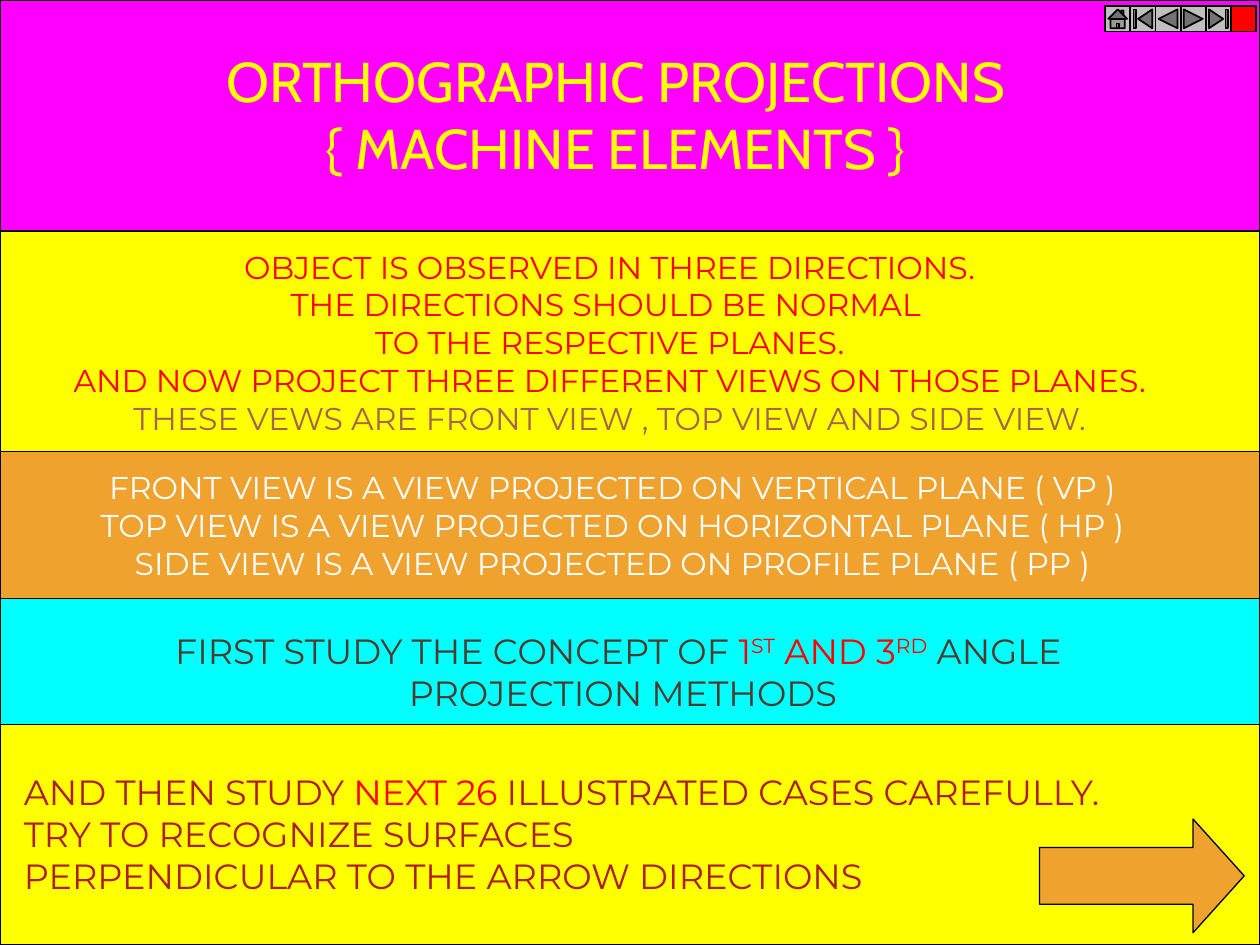
from pptx import Presentation
from pptx.dml.color import RGBColor
from pptx.enum import shapes, text
from pptx.util import Pt

MAGENTA = RGBColor(0xFF, 0x00, 0xFF)
YELLOW = RGBColor(0xFF, 0xFF, 0x00)
ORANGE = RGBColor(0xF0, 0xA2, 0x2E)
CYAN = RGBColor(0x00, 0xFF, 0xFF)
RED = RGBColor(0xFF, 0x00, 0x00)
BROWN = RGBColor(0xA5, 0x64, 0x4E)
DARK_BROWN = RGBColor(0x4E, 0x3B, 0x30)
DARK_RED = RGBColor(0xAD, 0x1F, 0x1F)
WHITE = RGBColor(0xFF, 0xFF, 0xFF)
GREY = RGBColor(0xC0, 0xC0, 0xC0)
BLACK = RGBColor(0x00, 0x00, 0x00)

WIDTH, HEIGHT = 720, 540
SHAPE = shapes.MSO_SHAPE
LEFT, CENTER = text.PP_ALIGN.LEFT, text.PP_ALIGN.CENTER


class Slide:
    title_font = "Cabin"
    body_font = "Montserrat"

    def __init__(self, deck):
        self.page = deck.slides.add_slide(deck.slide_layouts[5])

    def shape(self, kind, left, top, width, height, fill, line=0.75):
        shape = self.page.shapes.add_shape(kind, Pt(left), Pt(top), Pt(width), Pt(height))
        shape.shadow.inherit = False
        shape.fill.solid()
        shape.fill.fore_color.rgb = fill
        shape.line.color.rgb = BLACK
        shape.line.width = Pt(line)
        return shape

    def band(self, top, height, fill):
        return self.shape(SHAPE.RECTANGLE, 0, top, WIDTH, height, fill)

    def set_lines(self, box, lines, font, size, color, align):
        frame = box.text_frame
        frame.word_wrap = False
        frame.auto_size = text.MSO_AUTO_SIZE.NONE
        frame.vertical_anchor = text.MSO_ANCHOR.TOP
        for index, line in enumerate(lines):
            para = frame.add_paragraph() if index else frame.paragraphs[0]
            para.alignment = align
            para.font.name = font
            para.font.size = Pt(size)
            para.font.color.rgb = color
            for part in [(line,)] if isinstance(line, str) else line:
                self.span(para, *part)

    def span(self, para, words, color=None, raised=False):
        span = para.add_run()
        span.text = words
        if color is not None:
            span.font.color.rgb = color
        if raised:
            span._r.get_or_add_rPr().set("baseline", "30000")

    def title(self, band, left, top, width, height, lines):
        box = self.page.shapes.title
        box.left, box.top, box.width, box.height = map(Pt, (left, top, width, height))
        self.set_lines(box, lines, self.title_font, 32, YELLOW, CENTER)
        band.element.addnext(box.element)

    def body(self, left, top, width, height, lines, size, color, align=CENTER):
        box = self.page.shapes.add_textbox(Pt(left), Pt(top), Pt(width), Pt(height))
        self.set_lines(box, lines, self.body_font, size, color, align)

    def navigation(self, left, top, size, buttons):
        for index, (kind, fill) in enumerate(buttons):
            self.shape(kind, left + index * size, top, size, size, fill, line=1)


def main():
    deck = Presentation()
    deck.slide_width, deck.slide_height = Pt(WIDTH), Pt(HEIGHT)
    slide = Slide(deck)

    heading = slide.band(0, 132, MAGENTA)
    slide.title(heading, 90.5, 23, 523, 84,
                ["ORTHOGRAPHIC PROJECTIONS", "{ MACHINE ELEMENTS }"])

    slide.band(132, 126, YELLOW)
    slide.body(9.5, 138, 678, 115, [
        "OBJECT IS OBSERVED IN THREE DIRECTIONS.",
        "THE DIRECTIONS SHOULD BE NORMAL ",
        "TO THE RESPECTIVE PLANES.",
        "AND NOW PROJECT THREE DIFFERENT VIEWS ON THOSE PLANES.",
        [("THESE VEWS ARE FRONT VIEW , TOP VIEW AND SIDE VIEW.", BROWN)],
    ], 18, RED)

    slide.band(258, 84, ORANGE)
    slide.body(24, 264, 652, 72, [
        "FRONT VIEW IS A VIEW PROJECTED ON VERTICAL PLANE ( VP )",
        "TOP VIEW IS A VIEW PROJECTED ON HORIZONTAL PLANE ( HP )",
        "SIDE VIEW IS A VIEW PROJECTED ON PROFILE PLANE ( PP )",
    ], 18, WHITE)

    slide.band(414, 126, YELLOW)
    slide.body(6.5, 437, 708, 79, [
        [("AND THEN STUDY ",), ("NEXT 26", RED), (" ILLUSTRATED CASES CAREFULLY.",)],
        "TRY TO RECOGNIZE SURFACES",
        "PERPENDICULAR TO THE ARROW DIRECTIONS",
    ], 20, DARK_RED, LEFT)
    arrow = slide.shape(SHAPE.RIGHT_ARROW, 594, 468, 117, 65, ORANGE)
    arrow.adjustments[1] = 0.45

    slide.band(342, 72, CYAN)
    slide.body(60, 356, 592, 55, [
        [("FIRST STUDY THE CONCEPT OF ",), ("1", RED), ("ST", RED, True),
         (" AND 3", RED), ("RD", RED, True), (" ANGLE ",)],
        "PROJECTION METHODS",
    ], 20, DARK_BROWN)

    slide.navigation(631.5, 3.6, 14.4, [
        (SHAPE.ACTION_BUTTON_HOME, GREY),
        (SHAPE.ACTION_BUTTON_BEGINNING, GREY),
        (SHAPE.ACTION_BUTTON_BACK_OR_PREVIOUS, GREY),
        (SHAPE.ACTION_BUTTON_FORWARD_OR_NEXT, GREY),
        (SHAPE.ACTION_BUTTON_END, GREY),
        (SHAPE.ACTION_BUTTON_CUSTOM, RED),
    ])

    deck.save("out.pptx")


if __name__ == "__main__":
    main()
